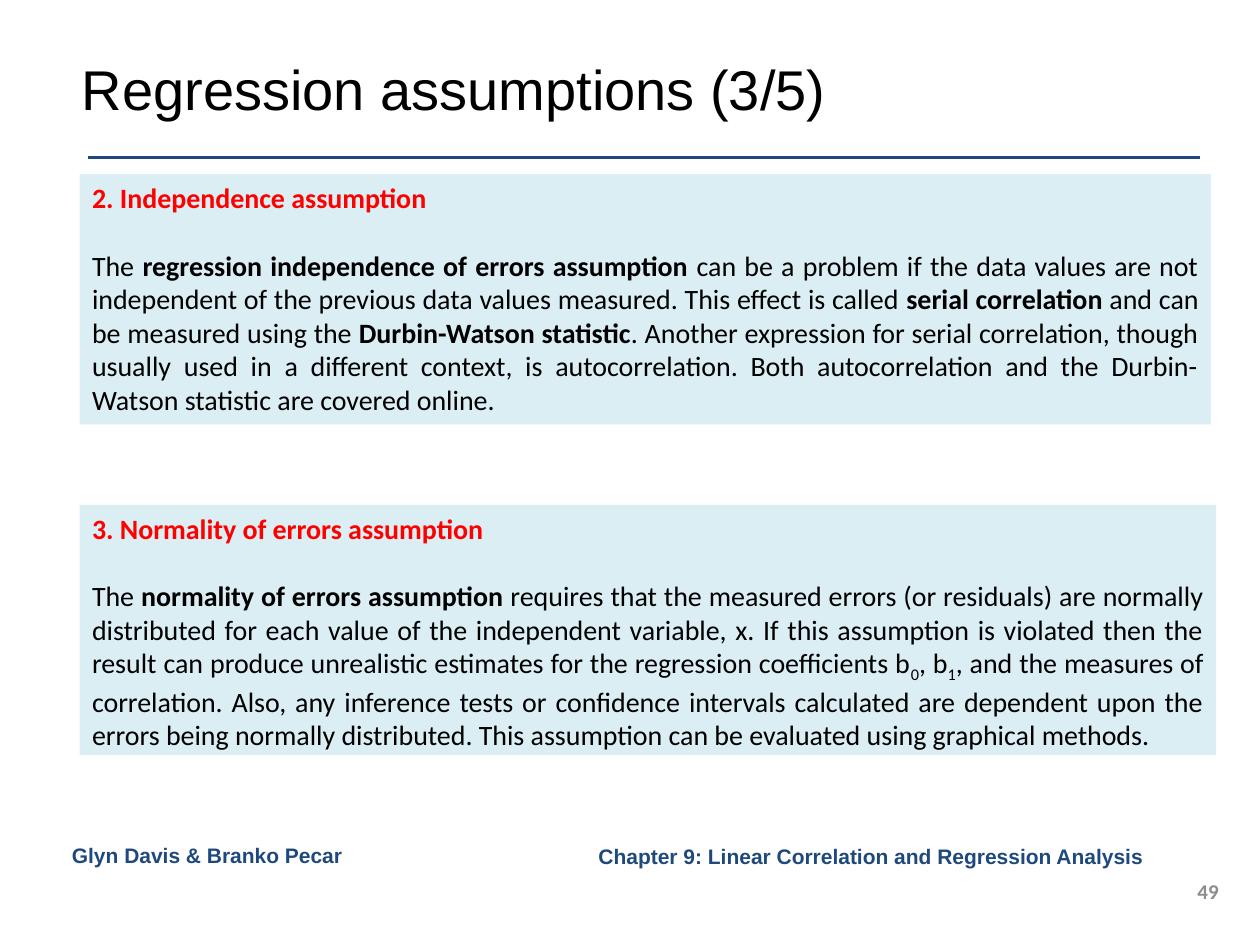
from dataclasses import dataclass

import pptx
import pptx.dml.color
import pptx.enum.shapes
import pptx.enum.text
import pptx.util
from lxml import etree
from pptx.oxml.ns import qn

Pt = pptx.util.Pt
ALIGN = pptx.enum.text.PP_ALIGN
ANCHOR = pptx.enum.text.MSO_ANCHOR

COLORS = {
    "navy": "1F497D",
    "panel": "DBEEF4",
    "heading": "FF0000",
    "text": "000000",
    "number": "8C8C8C",
}


@dataclass
class Box:
    left: float
    top: float
    width: float
    height: float

    def lengths(self) -> list:
        return [Pt(v) for v in (self.left, self.top, self.width, self.height)]


@dataclass
class Run:
    text: str
    bold: bool = False
    sub: bool = False


@dataclass
class Panel:
    box: Box
    heading: str
    body: list[Run]


def rgb(name: str) -> pptx.dml.color.RGBColor:
    return pptx.dml.color.RGBColor.from_string(COLORS[name])


def add_text(p, text: str, *, size=16, font="Calibri", color="text",
             bold=False, sub=False, align=ALIGN.LEFT) -> None:
    """Append one formatted run to a paragraph."""
    p.alignment = align
    r = p.add_run()
    r.text = text
    r.font.size, r.font.name, r.font.bold = Pt(size), font, bold
    r.font.color.rgb = rgb(color)
    if sub:
        r._r.get_or_add_rPr().set("baseline", "-25000")


def add_label(s, box: Box, text: str, anchor=ANCHOR.MIDDLE, **fmt) -> None:
    tf = s.shapes.add_textbox(*box.lengths()).text_frame
    tf.word_wrap = True
    tf.vertical_anchor = anchor
    add_text(tf.paragraphs[0], text, size=12, bold=True, **fmt)


def add_panel(s, panel: Panel) -> None:
    sp = s.shapes.add_shape(pptx.enum.shapes.MSO_SHAPE.RECTANGLE, *panel.box.lengths())
    sp.shadow.inherit = False
    sp.fill.solid()
    sp.fill.fore_color.rgb = rgb("panel")
    sp.line.fill.background()
    tf = sp.text_frame
    tf.word_wrap = True
    tf.vertical_anchor = ANCHOR.TOP
    p = tf.paragraphs[0]
    p.space_after = Pt(19.5)
    add_text(p, panel.heading, color="heading", bold=True, align=ALIGN.JUSTIFY)
    p = tf.add_paragraph()
    for r in panel.body:
        add_text(p, r.text, bold=r.bold, sub=r.sub, align=ALIGN.JUSTIFY)


PANELS = [
    Panel(Box(45.5, 99.5, 646.5, 143), "2. Independence assumption", [
        Run("The "),
        Run("regression independence of errors assumption", bold=True),
        Run(" can be a problem if the data values are not independent of the previous "
            "data values measured. This effect is called "),
        Run("serial correlation", bold=True),
        Run(" and can be measured using the "),
        Run("Durbin-Watson statistic", bold=True),
        Run(". Another expression for serial correlation, though usually used in a "
            "different context, is autocorrelation. Both autocorrelation and the "
            "Durbin-Watson statistic are covered online."),
    ]),
    Panel(Box(45.5, 288.5, 649.5, 143), "3. Normality of errors assumption", [
        Run("The "),
        Run("normality of errors assumption", bold=True),
        Run(" requires that the measured errors (or residuals) are normally distributed "
            "for each value of the independent variable, x. If this assumption is violated "
            "then the result can produce unrealistic estimates for the regression "
            "coefficients b"),
        Run("0", sub=True),
        Run(", b"),
        Run("1", sub=True),
        Run(", and the measures of correlation. Also, any inference tests or confidence "
            "intervals calculated are dependent upon the errors being normally distributed. "
            "This assumption can be evaluated using graphical methods."),
    ]),
]


def main() -> None:
    prs = pptx.Presentation()
    prs.slide_width, prs.slide_height = Pt(720), Pt(540)
    s = prs.slides.add_slide(prs.slide_layouts[5])

    # Title
    title = s.shapes.title
    title.left, title.top, title.width, title.height = Box(39.5, 22.5, 546, 56).lengths()
    tf = title.text_frame
    tf.auto_size = pptx.enum.text.MSO_AUTO_SIZE.NONE
    tf.vertical_anchor = ANCHOR.MIDDLE
    add_text(tf.paragraphs[0], "Regression assumptions (3/5)", size=32, font="Arial")

    # Rule under the title
    rule = s.shapes.add_connector(pptx.enum.shapes.MSO_CONNECTOR.STRAIGHT,
                                  Pt(50.5), Pt(90), Pt(686), Pt(90))
    rule.line.color.rgb = rgb("navy")
    rule.line.width = Pt(2)
    etree.SubElement(rule._element.spPr, qn("a:effectLst"))

    # Assumption panels
    for panel in PANELS:
        add_panel(s, panel)

    # Footer
    add_label(s, Box(34, 478, 214, 22.5), "Glyn Davis & Branko Pecar",
              anchor=ANCHOR.TOP, font="Arial", color="navy")
    add_label(s, Box(264, 478, 400, 22.5),
              "Chapter 9: Linear Correlation and Regression Analysis ",
              font="Arial", color="navy", align=ALIGN.RIGHT)
    add_label(s, Box(669.5, 500.5, 34, 17.5), "49", color="number", align=ALIGN.RIGHT)

    prs.save("out.pptx")


if __name__ == "__main__":
    main()
